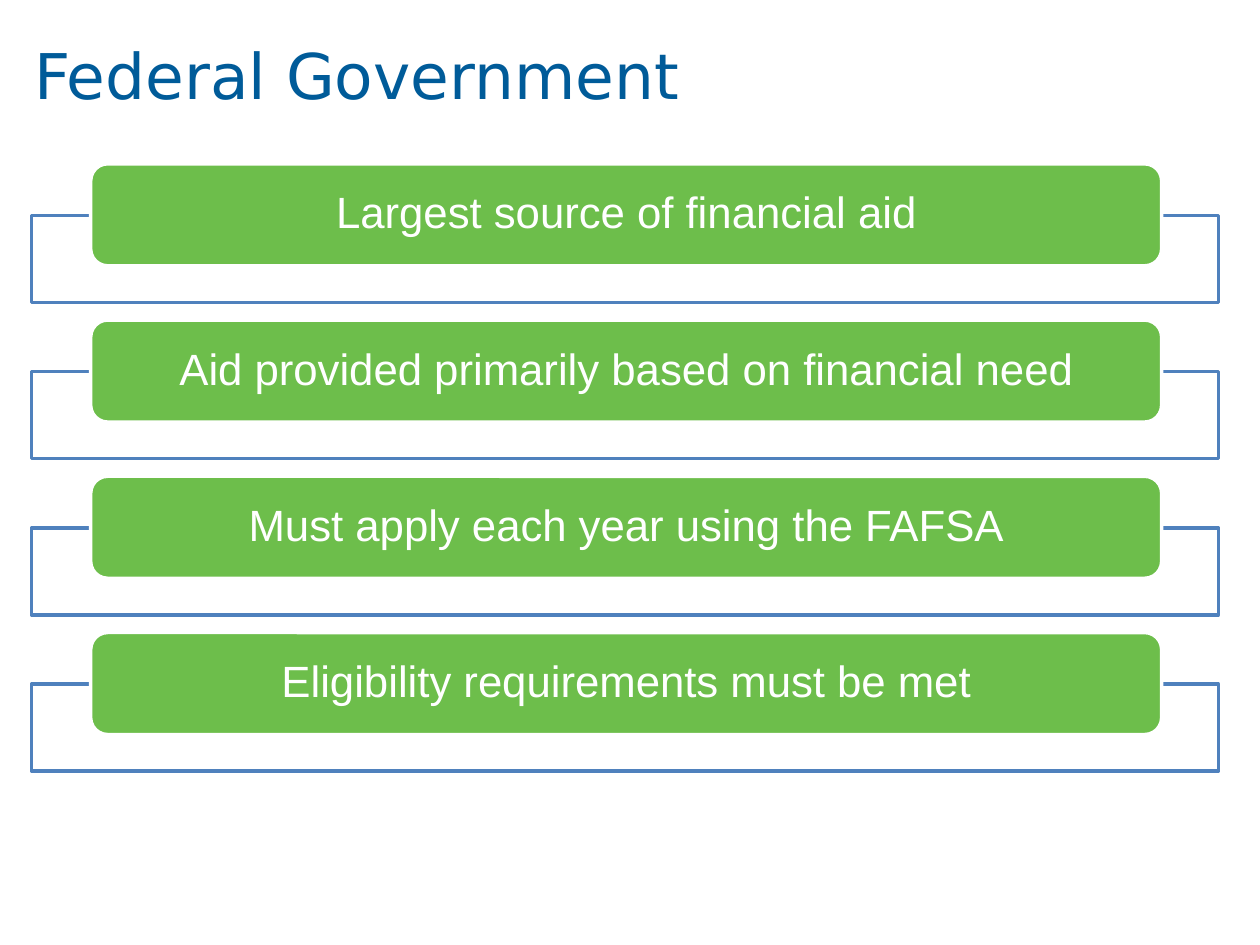
from lxml import etree
from pptx import Presentation
from pptx.dml.color import RGBColor
from pptx.enum import shapes, text
from pptx.oxml.ns import qn
from pptx.util import Inches, Pt

COLORS = {"title": "005B99", "bar": "6DBE4B", "frame": "4F81BD", "white": "FFFFFF"}
POINTS = [
    "Largest source of financial aid",
    "Aid provided primarily based on financial need",
    "Must apply each year using the FAFSA",
    "Eligibility requirements must be met",
]
FIRST_TOP, ROW_STEP = 1.3, 1.24


def add_box(slide, kind, left, top, width, height, fill, line):
    shape = slide.shapes.add_shape(
        kind, Inches(left), Inches(top), Inches(width), Inches(height))
    shape.shadow.inherit = False
    shape.fill.solid()
    shape.fill.fore_color.rgb = RGBColor.from_string(COLORS[fill])
    shape.line.color.rgb = RGBColor.from_string(COLORS[line])
    shape.line.width = Pt(2)
    return shape


def format_paragraph(paragraph, font_name, size, color, alignment):
    paragraph.alignment = alignment
    paragraph.line_spacing = 0.9
    paragraph.font.name = font_name
    paragraph.font.size = Pt(size)
    paragraph.font.color.rgb = RGBColor.from_string(COLORS[color])


presentation = Presentation()
presentation.slide_width = Inches(10)
presentation.slide_height = Inches(7.5)
slide = presentation.slides.add_slide(presentation.slide_layouts[5])

# Title
title = slide.shapes.title
title.left, title.top = Inches(0.17), Inches(0)
title.width, title.height = Inches(9.67), Inches(1.25)
title.text_frame.text = "Federal Government"
title.text_frame.vertical_anchor = text.MSO_ANCHOR.MIDDLE
format_paragraph(title.text_frame.paragraphs[0], "DejaVu Sans", 36, "title",
                 text.PP_ALIGN.LEFT)

# Points: a framed strip with a green bar over its upper edge
for row, point in enumerate(POINTS):
    top = FIRST_TOP + row * ROW_STEP
    frame = add_box(slide, shapes.MSO_SHAPE.RECTANGLE,
                    0.25, top + 0.41, 9.42, 0.69, "white", "frame")
    fill_color = frame.fill._xPr.find(qn("a:solidFill"))[0]
    etree.SubElement(fill_color, qn("a:alpha"), val="90000")

    bar = add_box(slide, shapes.MSO_SHAPE.ROUNDED_RECTANGLE,
                  0.72, top, 8.5, 0.81, "bar", "white")
    text_frame = bar.text_frame
    text_frame.text = point
    text_frame.word_wrap = True
    text_frame.vertical_anchor = text.MSO_ANCHOR.MIDDLE
    text_frame.margin_left = text_frame.margin_right = Inches(0.25)
    text_frame.margin_top = text_frame.margin_bottom = 0
    format_paragraph(text_frame.paragraphs[0], "Arial", 25, "white",
                     text.PP_ALIGN.CENTER)

presentation.save("out.pptx")
